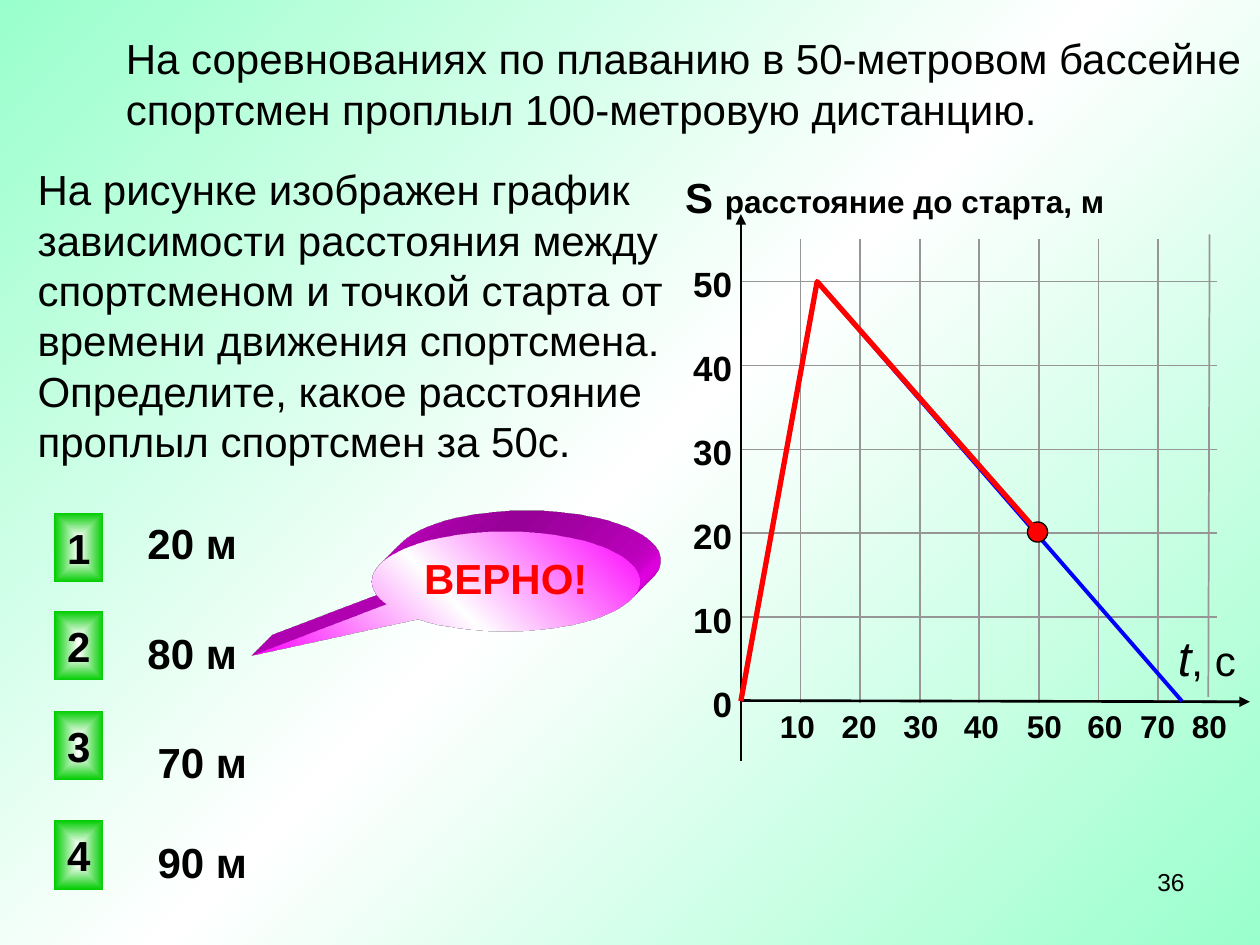
from dataclasses import dataclass
from typing import NamedTuple, Optional

from lxml.etree import SubElement
from pptx import Presentation
from pptx.dml.color import RGBColor
from pptx.enum.shapes import MSO_CONNECTOR, MSO_SHAPE
from pptx.enum.text import MSO_ANCHOR, MSO_AUTO_SIZE, PP_ALIGN
from pptx.oxml import parse_xml
from pptx.oxml.ns import nsdecls, qn
from pptx.util import Emu, Inches, Pt


@dataclass(frozen=True)
class Theme:
    font: str = "Arial"
    ink: str = "000000"
    mint: str = "99FFCC"
    white: str = "FFFFFF"
    green: str = "00CC00"
    magenta: str = "FF00FF"
    red: str = "FF0000"
    blue: str = "0000FF"
    grid: str = "969696"
    variable: int = 28
    body: int = 24
    scale: int = 20
    caption: int = 18
    number: int = 14


class Box(NamedTuple):
    """Columns and rows of a slide grid of 100 by 75 squares."""
    col: float
    row: float
    cols: float
    rows: float


class Run(NamedTuple):
    text: str
    size: int
    bold: bool = False
    italic: bool = False
    color: str = Theme.ink


class Answer(NamedTuple):
    distance: str
    button_row: float
    text_col: float
    text_row: float


@dataclass(frozen=True)
class Plot:
    """Turns time and distance into slide grid columns and rows."""
    left: float = 58.8
    bottom: float = 55.65
    column: float = 4.73
    line: float = 6.66

    def point(self, time: float, distance: float) -> tuple[float, float]:
        return (self.left + time / 10 * self.column,
                self.bottom - distance / 10 * self.line)


THEME = Theme()
PLOT = Plot()
SQUARE = Inches(0.1)
ANSWERS = [
    Answer("20 м", 40.7, 9.8, 40.6),
    Answer("80 м", 48.5, 9.8, 49.3),
    Answer("70 м", 56.4, 10.6, 58),
    Answer("90 м", 65.1, 10.6, 65.9),
]
TIME_TABS = (3.4, 8.3, 13.2, 18.0, 23.0, 27.8, 32.0, 36.1)


def squares(*counts: float) -> list[Emu]:
    return [Emu(round(count * SQUARE)) for count in counts]


def write(frame, paragraphs: list[list[Run]], align: Optional[PP_ALIGN] = None) -> None:
    for index, runs in enumerate(paragraphs):
        paragraph = frame.paragraphs[0] if index == 0 else frame.add_paragraph()
        paragraph.alignment = align
        for part in runs:
            run = paragraph.add_run()
            run.text = part.text
            run.font.name = THEME.font
            run.font.size = Pt(part.size)
            run.font.bold = part.bold
            run.font.italic = part.italic
            run.font.color.rgb = RGBColor.from_string(part.color)


def add_text(slide, box: Box, paragraphs: list[list[Run]], wrap: bool = False,
             align: Optional[PP_ALIGN] = None):
    frame = slide.shapes.add_textbox(*squares(*box)).text_frame
    frame.word_wrap = wrap
    frame.auto_size = MSO_AUTO_SIZE.SHAPE_TO_FIT_TEXT
    write(frame, paragraphs, align)
    return frame


def set_gradient(fill, holder, colors: list[str], angle: Optional[int] = None) -> None:
    """Spread colours evenly, along an angle or outwards from the centre."""
    fill.solid()
    stops = "".join(
        f'<a:gs pos="{index * 100000 // (len(colors) - 1)}"><a:srgbClr val="{color}"/></a:gs>'
        for index, color in enumerate(colors))
    if angle is None:
        course = ('<a:path path="rect"><a:fillToRect l="50000" t="50000" '
                  'r="50000" b="50000"/></a:path>')
    else:
        course = f'<a:lin ang="{angle * 60000}" scaled="0"/>'
    gradient = parse_xml(f'<a:gradFill {nsdecls("a")} rotWithShape="1">'
                         f'<a:gsLst>{stops}</a:gsLst>{course}</a:gradFill>')
    solid = holder.find(qn("a:solidFill"))
    holder.replace(solid, gradient)


def add_preset(slide, kind: MSO_SHAPE, box: Box):
    shape = slide.shapes.add_shape(kind, *squares(*box))
    shape.shadow.inherit = False
    shape.line.fill.background()
    return shape


def add_line(slide, start: tuple, end: tuple, color: str, width: float,
             arrow: bool = False) -> None:
    line = slide.shapes.add_connector(MSO_CONNECTOR.STRAIGHT, *squares(*start, *end))
    line.line.color.rgb = RGBColor.from_string(color)
    line.line.width = Pt(width)
    if arrow:
        SubElement(line.line._get_or_add_ln(), qn("a:tailEnd"), type="triangle")
    SubElement(line._element.spPr, qn("a:effectLst"))


def add_track(slide, readings: list[tuple], color: str, width: float) -> None:
    start, *rest = [squares(*PLOT.point(*reading)) for reading in readings]
    builder = slide.shapes.build_freeform(*start)
    builder.add_line_segments(rest, close=False)
    track = builder.convert_to_shape()
    track.shadow.inherit = False
    track.fill.background()
    track.line.color.rgb = RGBColor.from_string(color)
    track.line.width = Pt(width)


def add_answer(slide, number: int, answer: Answer) -> None:
    button = add_preset(slide, MSO_SHAPE.ACTION_BUTTON_CUSTOM,
                        Box(4.3, answer.button_row, 3.9, 5.5))
    set_gradient(button.fill, button._element.spPr, [THEME.white, THEME.green])
    button.text_frame.word_wrap = False
    button.text_frame.vertical_anchor = MSO_ANCHOR.MIDDLE
    write(button.text_frame, [[Run(str(number), THEME.body, bold=True)]], PP_ALIGN.CENTER)
    add_text(slide, Box(answer.text_col, answer.text_row, 10, 5),
             [[Run(" " + answer.distance, THEME.body, bold=True)]])


def add_verdict(slide) -> None:
    callout = add_preset(slide, MSO_SHAPE.OVAL_CALLOUT, Box(29.5, 42.2, 21.3, 7.9))
    callout.adjustments[0], callout.adjustments[1] = -0.949, 0.744
    set_gradient(callout.fill, callout._element.spPr,
                 [THEME.magenta, THEME.white, THEME.magenta], 315)
    # Depth towards the upper right
    callout._element.spPr.append(parse_xml(
        f'<a:scene3d {nsdecls("a")}><a:camera prst="legacyObliqueTopRight"/>'
        '<a:lightRig rig="legacyFlat3" dir="b"/></a:scene3d>'))
    callout._element.spPr.append(parse_xml(
        f'<a:sp3d {nsdecls("a")} extrusionH="430200" prstMaterial="legacyMatte">'
        f'<a:extrusionClr><a:srgbClr val="{THEME.magenta}"/></a:extrusionClr></a:sp3d>'))
    callout.text_frame.word_wrap = True
    callout.text_frame.vertical_anchor = MSO_ANCHOR.TOP
    write(callout.text_frame, [[Run("ВЕРНО!", THEME.body, bold=True, color=THEME.red)]],
          PP_ALIGN.CENTER)


def add_graph(slide) -> None:
    # Grid
    for step in range(8):
        x = PLOT.point(step * 10, 0)[0]
        add_line(slide, (x, 19), (x, 55.8), THEME.grid, 1)
    add_line(slide, (96, 18.6), (95.9, 55.3), THEME.grid, 1)
    for step in range(6):
        y = PLOT.point(0, step * 10)[1]
        add_line(slide, (PLOT.left, y), (96.6, y), THEME.grid, 1)
    # Axes
    add_line(slide, (PLOT.left, 55.6), (99.2, 55.7), THEME.ink, 1.5, arrow=True)
    add_line(slide, (PLOT.left, 60.4), (PLOT.left, 17), THEME.ink, 1.5, arrow=True)
    # Axis captions and scales
    add_text(slide, Box(53.4, 13.1, 35.4, 5),
             [[Run("S ", THEME.body, bold=True),
               Run("расстояние до старта, м", THEME.caption, bold=True)]])
    distances = add_text(slide, Box(54, 17, 5.1, 41),
                         [[Run(str(value), THEME.scale, bold=True)]
                          for value in range(50, -1, -10)], align=PP_ALIGN.RIGHT)
    for paragraph in distances.paragraphs:
        paragraph.line_spacing = Pt(48)
    times = add_text(slide, Box(58.9, 55.6, 40.3, 4),
                     [[Run("".join(f"\t{value}" for value in range(10, 90, 10)),
                           THEME.caption, bold=True)]], wrap=True)
    tabs = SubElement(times.paragraphs[0]._p.get_or_add_pPr(), qn("a:tabLst"))
    for position in squares(*TIME_TABS):
        SubElement(tabs, qn("a:tab"), pos=str(position), algn="ctr")
    # Swim, and its part up to 50 seconds
    start, turn, moment, finish = (0, 0), (12.8, 50), (50, 20), (74, 0)
    add_track(slide, [start, turn, finish], THEME.blue, 2.25)
    add_text(slide, Box(92.5, 49.3, 7.5, 5.7),
             [[Run("t", THEME.variable, italic=True), Run(", c", THEME.body)]])
    x, y = PLOT.point(*moment)
    dot = add_preset(slide, MSO_SHAPE.OVAL, Box(x - 0.9, y - 0.9, 1.6, 1.6))
    dot.fill.solid()
    dot.fill.fore_color.rgb = RGBColor.from_string(THEME.red)
    dot.line.color.rgb = RGBColor.from_string(THEME.ink)
    dot.line.width = Pt(0.75)
    add_track(slide, [start, turn, moment], THEME.red, 3)


def main() -> None:
    deck = Presentation()
    deck.slide_width, deck.slide_height = squares(100, 75)
    slide = deck.slides.add_slide(deck.slide_layouts[6])
    backdrop = slide.background.fill
    backdrop.solid()
    set_gradient(backdrop, slide._element.cSld.bg.bgPr,
                 [THEME.mint, THEME.white, THEME.mint], 45)

    # Problem
    add_text(slide, Box(2, 12.5, 52.8, 25), [
        [Run("На рисунке изображен график зависимости расстояния между", THEME.body)],
        [Run("спортсменом и точкой старта от времени движения спортсмена. "
             "Определите, какое расстояние проплыл спортсмен за 50с.", THEME.body)],
    ], wrap=True)
    add_text(slide, Box(9, 2.1, 91.8, 9), [
        [Run("На соревнованиях по плаванию в 50-метровом бассейне", THEME.body)],
        [Run("спортсмен проплыл 100-метровую дистанцию.", THEME.body)],
    ])

    # Answers, verdict and graph
    for number, answer in enumerate(ANSWERS, start=1):
        add_answer(slide, number, answer)
    add_verdict(slide)
    add_graph(slide)

    # Slide number
    add_text(slide, Box(71.7, 68.3, 23.3, 5.2), [[Run("36", THEME.number)]],
             wrap=True, align=PP_ALIGN.RIGHT)
    deck.save("out.pptx")


if __name__ == "__main__":
    main()
